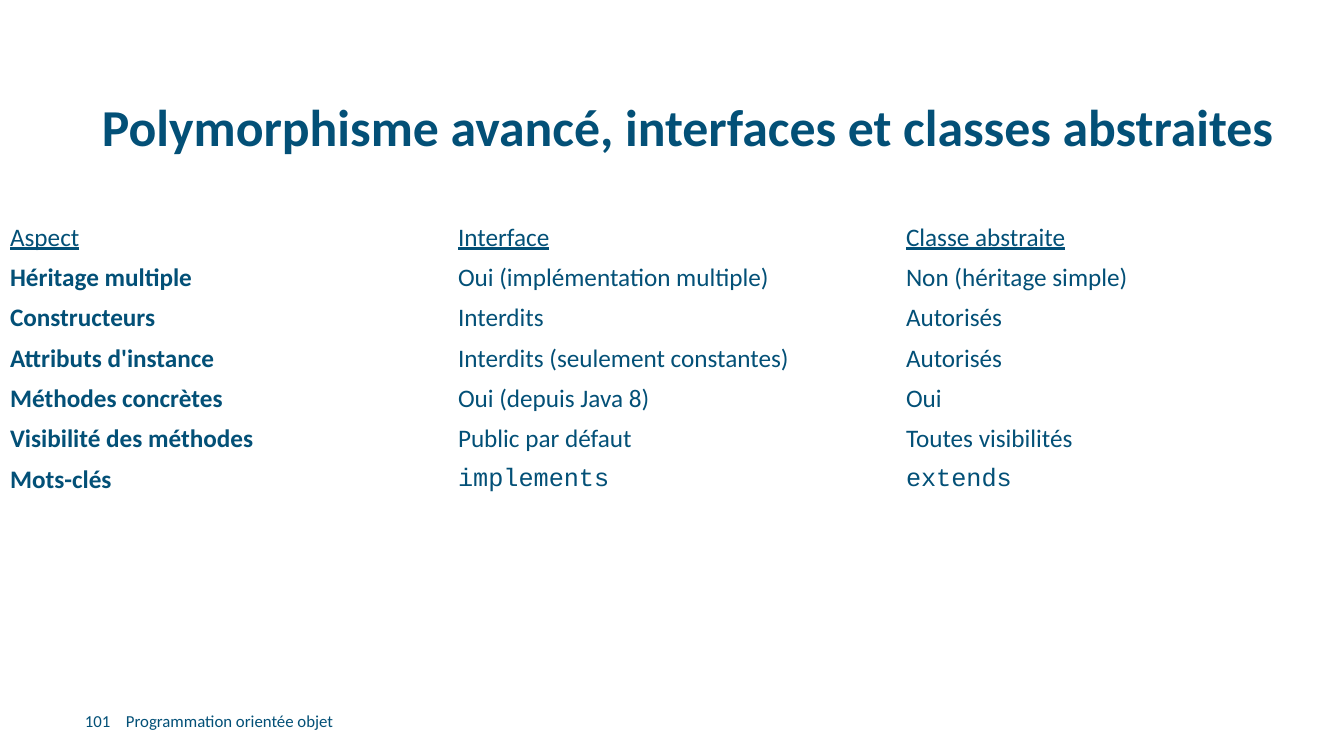
"""Build the slide comparing interfaces and abstract classes."""
from pptx import Presentation
from pptx.dml.color import RGBColor
from pptx.enum import text
from pptx.util import Pt

TITLE = "Polymorphisme avancé, interfaces et classes abstraites"
ROWS = [
    ("Aspect", "Interface", "Classe abstraite"),
    ("Héritage multiple", "Oui (implémentation multiple)", "Non (héritage simple)"),
    ("Constructeurs", "Interdits", "Autorisés"),
    ("Attributs d'instance", "Interdits (seulement constantes)", "Autorisés"),
    ("Méthodes concrètes", "Oui (depuis Java 8)", "Oui"),
    ("Visibilité des méthodes", "Public par défaut", "Toutes visibilités"),
    ("Mots-clés", "implements", "extends"),
]
FOOT = [("Programmation orientée objet", 126, 454), ("101", 85, 40)]
CODE = {"implements", "extends"}
COLORS = {"ink": "035077"}
WIDTH, HEIGHT = 1344, 756
TOP, ROW = 217, 40


def px(n):
    return round(n * 914400 / 100.8)


def style(par, size, bold=False, face="Calibri"):
    font = par.font
    font.name, font.size, font.bold = face, Pt(size), bold
    font.color.rgb = RGBColor.from_string(COLORS["ink"])


def add_title(slide):
    title = slide.shapes.title
    title.left, title.top, title.width, title.height = map(px, (102, 57, 1174, 146))
    frame = title.text_frame
    frame.text = TITLE
    frame.word_wrap = True
    frame.auto_size = text.MSO_AUTO_SIZE.NONE
    frame.vertical_anchor = text.MSO_ANCHOR.MIDDLE
    frame.margin_left = frame.margin_right = frame.margin_top = frame.margin_bottom = 0
    par = frame.paragraphs[0]
    par.alignment = text.PP_ALIGN.LEFT
    par.line_spacing = 0.9
    style(par, 37, True)


def add_foot(slide):
    for words, left, width in FOOT:
        box = slide.shapes.add_textbox(*map(px, (left, 701, width, 40)))
        frame = box.text_frame
        frame.text = words
        frame.word_wrap = True
        frame.vertical_anchor = text.MSO_ANCHOR.MIDDLE
        frame.margin_left = 0
        style(frame.paragraphs[0], 12)


def add_grid(slide):
    count = len(ROWS)
    grid = slide.shapes.add_table(
        count, len(ROWS[0]), 0, px(TOP), px(WIDTH), px(ROW * count)).table
    grid.first_row = grid.horz_banding = False
    for r, row in enumerate(ROWS):
        for c, words in enumerate(row):
            cell = grid.cell(r, c)
            cell.text = words
            cell.fill.background()
            cell.vertical_anchor = text.MSO_ANCHOR.MIDDLE
            par = cell.text_frame.paragraphs[0]
            face = "Courier New" if words in CODE else "Calibri"
            style(par, 18, r > 0 and c == 0, face)
            par.font.underline = r == 0


def main():
    deck = Presentation()
    deck.slide_width, deck.slide_height = px(WIDTH), px(HEIGHT)
    slide = deck.slides.add_slide(deck.slide_layouts[5])
    add_foot(slide)
    add_title(slide)
    add_grid(slide)
    deck.save("out.pptx")


if __name__ == "__main__":
    main()
